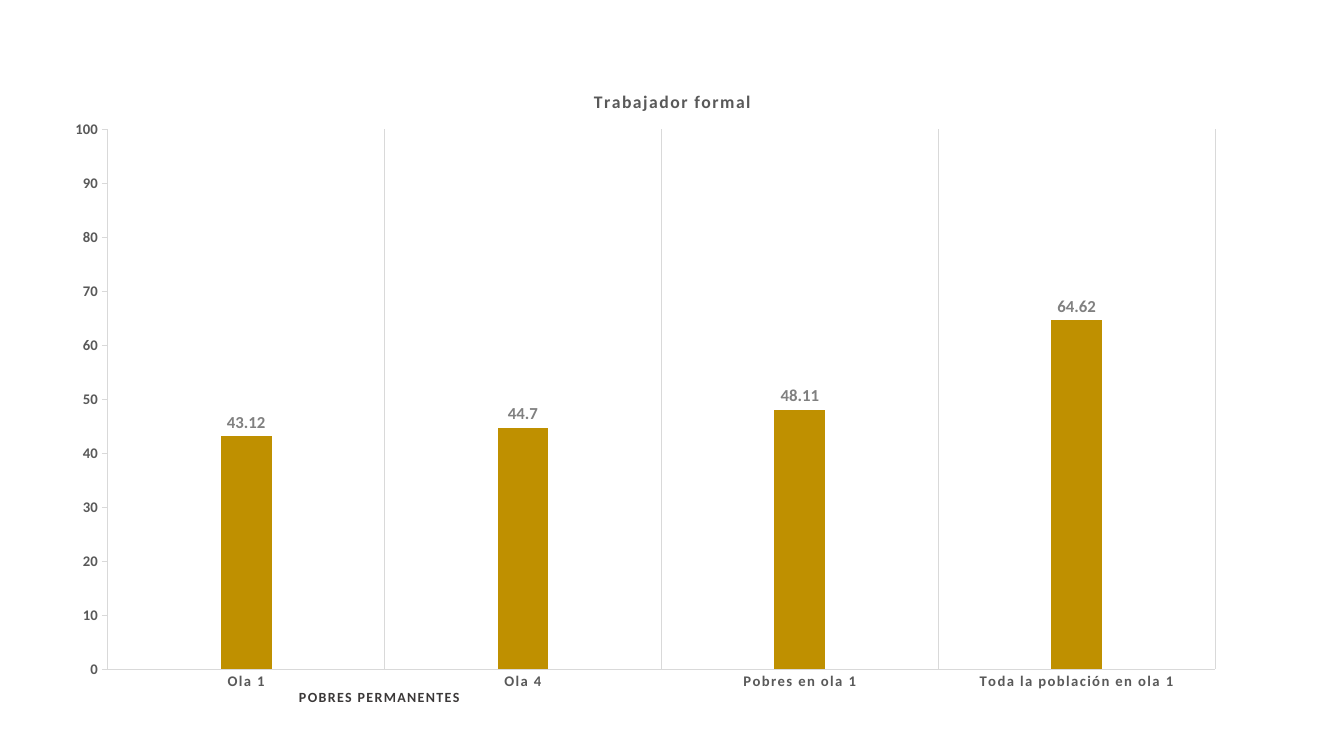
"""Build a slide with a column chart of formal workers by poverty group."""
from pptx import Presentation
from pptx.chart.data import CategoryChartData
from pptx.dml.color import RGBColor
from pptx.enum.chart import XL_CHART_TYPE, XL_LABEL_POSITION, XL_TICK_MARK
from pptx.oxml import parse_xml
from pptx.oxml.ns import nsdecls
from pptx.util import Pt

COLUMNS = XL_CHART_TYPE.COLUMN_CLUSTERED
OUTSIDE_END = XL_LABEL_POSITION.OUTSIDE_END
TICK_NONE = XL_TICK_MARK.NONE
TICK_OUTSIDE = XL_TICK_MARK.OUTSIDE
COLORS = {"bar": "BF9000", "line": "D9D9D9", "axis": "595959",
          "value": "808080", "caption": "3B3838"}
FORMAL_WORKERS = {"Ola 1": 43.12, "Ola 4": 44.7, "Pobres en ola 1": 48.11,
                  "Toda la población en ola 1": 64.62}
PLOT_LAYOUT = {"x": 0.034, "y": 0.097, "w": 0.914, "h": 0.861}


def style_font(font, size, color):
    font.name = "Calibri"
    font.size = Pt(size)
    font.bold = True
    font.color.rgb = RGBColor.from_string(COLORS[color])


def style_line(line):
    line.color.rgb = RGBColor.from_string(COLORS["line"])
    line.width = Pt(0.75)


presentation = Presentation()
presentation.slide_width = Pt(960)
presentation.slide_height = Pt(540)
slide = presentation.slides.add_slide(presentation.slide_layouts[6])

chart_data = CategoryChartData()
chart_data.categories = list(FORMAL_WORKERS)
chart_data.add_series("Trabajador formal", list(FORMAL_WORKERS.values()))
chart = slide.shapes.add_chart(
    COLUMNS, Pt(47.5), Pt(49), Pt(865.5), Pt(448), chart_data).chart
chart.has_legend = False
chart.has_title = True
chart.chart_title.include_in_layout = False
title_frame = chart.chart_title.text_frame
title_frame.text = "Trabajador formal"
style_font(title_frame.paragraphs[0].font, 12.6, "axis")

category_axis = chart.category_axis
value_axis = chart.value_axis
for axis, tick_mark in ((category_axis, TICK_NONE), (value_axis, TICK_OUTSIDE)):
    axis.major_tick_mark = tick_mark
    axis.minor_tick_mark = TICK_NONE
    style_font(axis.tick_labels.font, 10.5, "axis")
    style_line(axis.format.line)
category_axis.has_major_gridlines = True
style_line(category_axis.major_gridlines.format.line)
value_axis.has_major_gridlines = False
value_axis.minimum_scale = 0
value_axis.maximum_scale = 100
value_axis.major_unit = 10

plot = chart.plots[0]
plot.vary_by_categories = False
plot.gap_width = 444
plot.overlap = -90
series = plot.series[0]
series.format.fill.solid()
series.format.fill.fore_color.rgb = RGBColor.from_string(COLORS["bar"])
labels = series.data_labels
labels.show_value = True
labels.position = OUTSIDE_END
labels.number_format = "General"
labels.number_format_is_linked = False
style_font(labels.font, 12, "value")

chart_space = chart._chartSpace
for properties in chart_space.xpath("c:chart/c:title//a:defRPr | .//c:catAx/c:txPr//a:defRPr"):
    properties.set("spc", "100")
plot_area = chart_space.xpath("c:chart/c:plotArea")[0]
for layout in plot_area.xpath("c:layout"):
    plot_area.remove(layout)
modes = "".join(f'<c:{side}Mode val="edge"/>' for side in "xy")
lengths = "".join(f'<c:{side} val="{part}"/>' for side, part in PLOT_LAYOUT.items())
plot_area.insert(0, parse_xml(
    f'<c:layout {nsdecls("c")}><c:manualLayout><c:layoutTarget val="inner"/>'
    f"{modes}{lengths}</c:manualLayout></c:layout>"))

caption = slide.shapes.add_textbox(Pt(206.5), Pt(488), Pt(360), Pt(38))
caption.text_frame.word_wrap = True
paragraph = caption.text_frame.paragraphs[0]
run = paragraph.add_run()
run.text = "POBRES PERMANENTES"
style_font(run.font, 10, "caption")
run.font._element.set("spc", "100")

presentation.save("out.pptx")
